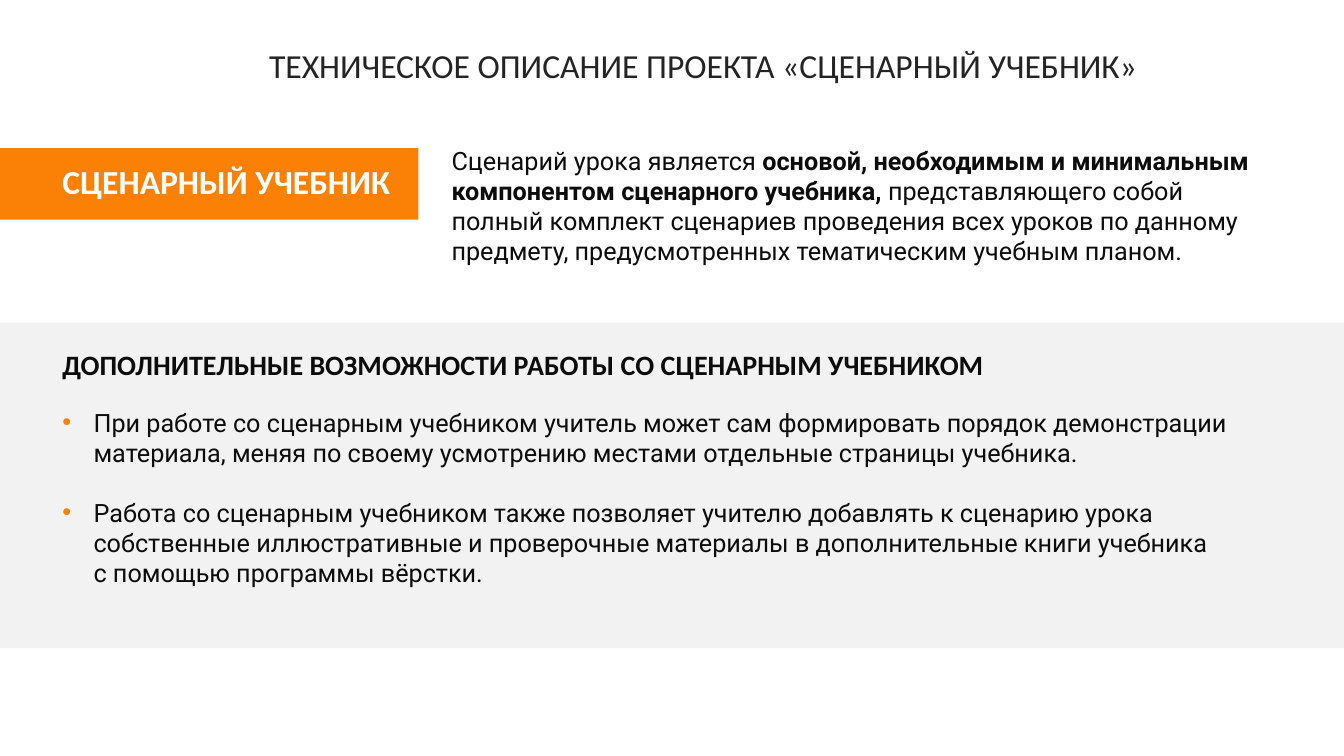
from lxml import etree
from pptx import Presentation
from pptx.dml.color import RGBColor
from pptx.enum.shapes import MSO_SHAPE
from pptx.enum.text import MSO_ANCHOR
from pptx.oxml.ns import qn
from pptx.util import Inches, Pt

RECTANGLE = MSO_SHAPE.RECTANGLE
TOP, MIDDLE = MSO_ANCHOR.TOP, MSO_ANCHOR.MIDDLE

ORANGE = RGBColor(0xFA, 0x80, 0x06)
PALE_GRAY = RGBColor(0xF2, 0xF2, 0xF2)
CHARCOAL = RGBColor(0x24, 0x24, 0x24)
INK = RGBColor(0x0C, 0x0C, 0x0C)
WHITE = RGBColor(0xFF, 0xFF, 0xFF)

SLIDE_WIDTH, SLIDE_HEIGHT = 13.33, 7.5
MARGIN = 0.52
BULLET_INDENT = 0.31

TITLE = {"name": "Calibri", "size": Pt(24)}
LABEL = {"name": "Calibri", "size": Pt(24), "bold": True}
HEADING = {"name": "Calibri", "size": Pt(20), "bold": True}
BODY = {"name": "Roboto", "size": Pt(18)}

DESCRIPTION = [
    ("Сценарий урока является ", False),
    ("основой, необходимым и минимальным компонентом сценарного учебника,", True),
    (" представляющего собой полный комплект сценариев проведения всех уроков "
     "по данному предмету, предусмотренных тематическим учебным планом.", False),
]
FEATURES = [
    "При работе со сценарным учебником учитель может сам формировать порядок "
    "демонстрации материала, меняя по своему усмотрению местами отдельные "
    "страницы учебника.",
    "Работа со сценарным учебником также позволяет учителю добавлять к сценарию "
    "урока собственные иллюстративные и проверочные материалы в дополнительные "
    "книги учебника\vс помощью программы вёрстки.",
]


class SlideWriter:
    def __init__(self, page):
        self.page = page

    def band(self, left, top, width, height, color):
        shape = self.page.shapes.add_shape(
            RECTANGLE, *map(Inches, (left, top, width, height)))
        shape.shadow.inherit = False
        shape.fill.solid()
        shape.fill.fore_color.rgb = color
        shape.line.fill.background()

    def frame(self, left, top, width, height, anchor=TOP):
        box = self.page.shapes.add_textbox(
            *map(Inches, (left, top, width, height)))
        box.text_frame.word_wrap = True
        box.text_frame.vertical_anchor = anchor
        return box.text_frame

    def style(self, font, style, color):
        for attribute, value in style.items():
            setattr(font, attribute, value)
        font.color.rgb = color

    def text(self, place, spans, style, color, anchor=TOP, line_spacing=None):
        para = self.frame(*place, anchor).paragraphs[0]
        para.line_spacing = line_spacing
        for words, bold in spans:
            span = para.add_run()
            span.text = words
            self.style(span.font, {**style, "bold": bold}, color)

    def bullets(self, place, items, style, color, bullet_color, gap):
        frame = self.frame(*place)
        for index, item in enumerate(items):
            para = frame.paragraphs[0] if index == 0 else frame.add_paragraph()
            para.text = item
            self.mark(para, bullet_color)
            if index:
                para.space_before = gap
            for span in para.runs:
                self.style(span.font, style, color)

    def mark(self, para, color):
        properties = para._p.get_or_add_pPr()
        indent = Inches(BULLET_INDENT)
        properties.set("marL", str(indent))
        properties.set("indent", str(-indent))
        tint = etree.SubElement(properties, qn("a:buClr"))
        etree.SubElement(tint, qn("a:srgbClr"), val=str(color))
        etree.SubElement(properties, qn("a:buFont"), typeface="Arial")
        etree.SubElement(properties, qn("a:buChar"), char="•")


def main():
    deck = Presentation()
    deck.slide_width = Inches(SLIDE_WIDTH)
    deck.slide_height = Inches(SLIDE_HEIGHT)
    writer = SlideWriter(deck.slides.add_slide(deck.slide_layouts[6]))

    writer.band(0, 1.47, 4.15, 0.71, ORANGE)
    writer.band(0, 3.2, SLIDE_WIDTH, 3.23, PALE_GRAY)
    writer.text((2.57, 0.36, 9.13, 0.64),
                [("ТЕХНИЧЕСКОЕ ОПИСАНИЕ ПРОЕКТА «СЦЕНАРНЫЙ УЧЕБНИК»", False)],
                TITLE, CHARCOAL, MIDDLE, 0.8)
    writer.text((4.38, 1.39, 8.35, 1.57), DESCRIPTION, BODY, INK)
    writer.bullets((MARGIN, 3.99, 11.97, 2.76), FEATURES,
                   BODY, INK, ORANGE, Pt(21))
    writer.text((MARGIN, 1.55, 3.78, 0.5), [("СЦЕНАРНЫЙ УЧЕБНИК", True)],
                LABEL, WHITE)
    writer.text((MARGIN, 3.4, 12.13, 0.44),
                [("ДОПОЛНИТЕЛЬНЫЕ ВОЗМОЖНОСТИ РАБОТЫ СО СЦЕНАРНЫМ УЧЕБНИКОМ", True)],
                HEADING, INK)

    deck.save("out.pptx")


if __name__ == "__main__":
    main()
